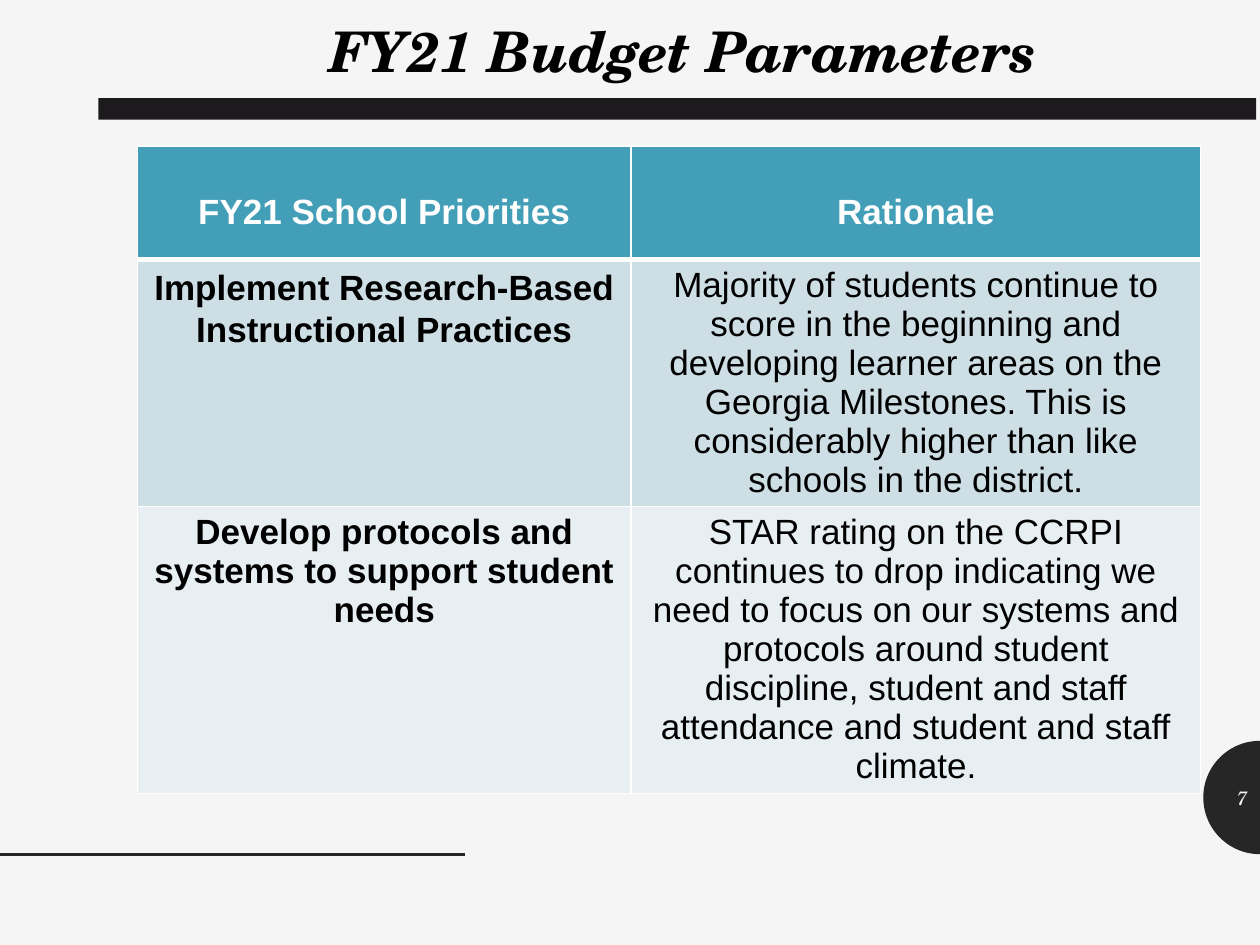
from dataclasses import dataclass
from math import cos, pi, sin

from lxml.etree import SubElement
from pptx import Presentation
from pptx.dml.color import RGBColor
from pptx.enum.shapes import MSO_CONNECTOR, MSO_SHAPE
from pptx.enum.text import MSO_ANCHOR, MSO_AUTO_SIZE, PP_ALIGN
from pptx.oxml.ns import qn
from pptx.util import Emu, Inches, Pt

WIDTH, HEIGHT = Inches(10), Inches(7.5)
SERIF, SANS = "TeX Gyre Schola", "Arial"
DARK, PAPER, WHITE, BLACK = "262626", "F5F5F5", "FFFFFF", "000000"
COLUMN_WIDTHS = (3.92, 4.52)


@dataclass
class Row:
    texts: tuple[str, str]
    height: float
    fill: str
    color: str = BLACK
    bold: tuple[bool, bool] = (True, False)
    top_margin: float = 0.05
    first_line_spacing: float = 1.0
    top_border: float = 1
    bottom_border: float = 1


ROWS = (
    Row(("FY21 School Priorities", "Rationale"), 0.9, "439EB7", WHITE,
        bold=(True, True), top_margin=0.37, bottom_border=3),
    Row(("Implement Research-Based Instructional Practices",
         "Majority of students continue to score in the beginning and developing "
         "learner areas on the Georgia Milestones. This is considerably higher "
         "than like schools in the district."),
        1.96, "CDDEE5", first_line_spacing=1.07, top_border=3),
    Row(("Develop protocols and systems to support student needs",
         "STAR rating on the CCRPI continues to drop indicating we need to focus "
         "on our systems and protocols around student discipline, student and "
         "staff attendance and student and staff climate."),
        2.28, "E8EFF3"),
)


def rgb(value: str) -> RGBColor:
    return RGBColor.from_string(value)


def paint(shape, color: str) -> None:
    shape.shadow.inherit = False
    shape.fill.solid()
    shape.fill.fore_color.rgb = rgb(color)
    shape.line.fill.background()


def place(shape, left: float, top: float, width: float, height: float) -> None:
    shape.left, shape.top = Inches(left), Inches(top)
    shape.width, shape.height = Inches(width), Inches(height)


def write(frame, text: str, size: float, font: str, color: str, align=PP_ALIGN.CENTER,
          bold: bool = False, italic: bool = False) -> None:
    frame.text = text
    paragraph = frame.paragraphs[0]
    paragraph.alignment = align
    for run in paragraph.runs:
        run.font.size, run.font.name = Pt(size), font
        run.font.bold, run.font.italic = bold, italic
        run.font.color.rgb = rgb(color)


def add_half_disc(slide, center_y: float, radius: float, steps: int = 50) -> None:
    """Half disc that opens at the right edge of the slide."""
    middle, reach = Inches(center_y), Inches(radius)
    points = [(int(WIDTH - reach * sin(pi * step / steps)),
               int(middle - reach * cos(pi * step / steps)))
              for step in range(steps + 1)]
    builder = slide.shapes.build_freeform(*points[0])
    builder.add_line_segments(points[1:], close=True)
    paint(builder.convert_to_shape(), DARK)


def add_borders(cell, top: float, bottom: float) -> None:
    properties = cell._tc.get_or_add_tcPr()
    for side, width in (("L", 1), ("R", 1), ("T", top), ("B", bottom)):
        line = SubElement(properties, qn(f"a:ln{side}"), w=str(Pt(width)))
        fill = SubElement(line, qn("a:solidFill"))
        SubElement(fill, qn("a:srgbClr"), val=WHITE)


def add_priorities_table(slide, left: float, top: float) -> None:
    frame = slide.shapes.add_table(
        len(ROWS), len(COLUMN_WIDTHS), Inches(left), Inches(top),
        Inches(sum(COLUMN_WIDTHS)), Inches(sum(row.height for row in ROWS)))
    table = frame.table
    for column, width in zip(table.columns, COLUMN_WIDTHS):
        column.width = Inches(width)
    for index, row in enumerate(ROWS):
        table.rows[index].height = Inches(row.height)
        for position, (text, bold) in enumerate(zip(row.texts, row.bold)):
            cell = table.cell(index, position)
            add_borders(cell, row.top_border, row.bottom_border)
            cell.fill.solid()
            cell.fill.fore_color.rgb = rgb(row.fill)
            cell.margin_top = Inches(row.top_margin)
            write(cell.text_frame, text, 20, SANS, row.color, bold=bold)
        first = table.cell(index, 0).text_frame.paragraphs[0]
        first.line_spacing = row.first_line_spacing


def main() -> None:
    presentation = Presentation()
    presentation.slide_width, presentation.slide_height = WIDTH, HEIGHT
    slide = presentation.slides.add_slide(presentation.slide_layouts[5])
    slide.background.fill.solid()
    slide.background.fill.fore_color.rgb = rgb(PAPER)

    # Edge decoration
    add_half_disc(slide, center_y=6.33, radius=0.45)
    rule_y = Emu(int(HEIGHT * 0.904))
    rule = slide.shapes.add_connector(
        MSO_CONNECTOR.STRAIGHT, 0, rule_y, Emu(int(WIDTH * 0.369)), rule_y)
    rule.line.color.rgb = rgb(DARK)
    rule.line.width = Pt(2)
    SubElement(rule._element.spPr, qn("a:effectLst"))

    # Title and the bar below it
    title = slide.shapes.title
    place(title, 0.96, 0.08, 8.93, 0.64)
    title.text_frame.auto_size = MSO_AUTO_SIZE.NONE
    title.text_frame.vertical_anchor = MSO_ANCHOR.TOP
    write(title.text_frame, "FY21 Budget Parameters", 32, SERIF, BLACK,
          bold=True, italic=True)
    bar = slide.shapes.add_shape(MSO_SHAPE.RECTANGLE, 0, 0, 0, 0)
    place(bar, 0.78, 0.78, 9.19, 0.17)
    paint(bar, "1D1A1D")

    # Priorities and rationale
    add_priorities_table(slide, 1.09, 1.16)

    # Page number
    number = slide.shapes.add_textbox(0, 0, 0, 0)
    place(number, 9.55, 6.13, 0.45, 0.4)
    number.text_frame.word_wrap = True
    number.text_frame.vertical_anchor = MSO_ANCHOR.MIDDLE
    write(number.text_frame, "7", 11, SERIF, PAPER, PP_ALIGN.RIGHT, italic=True)

    presentation.save("out.pptx")


if __name__ == "__main__":
    main()
